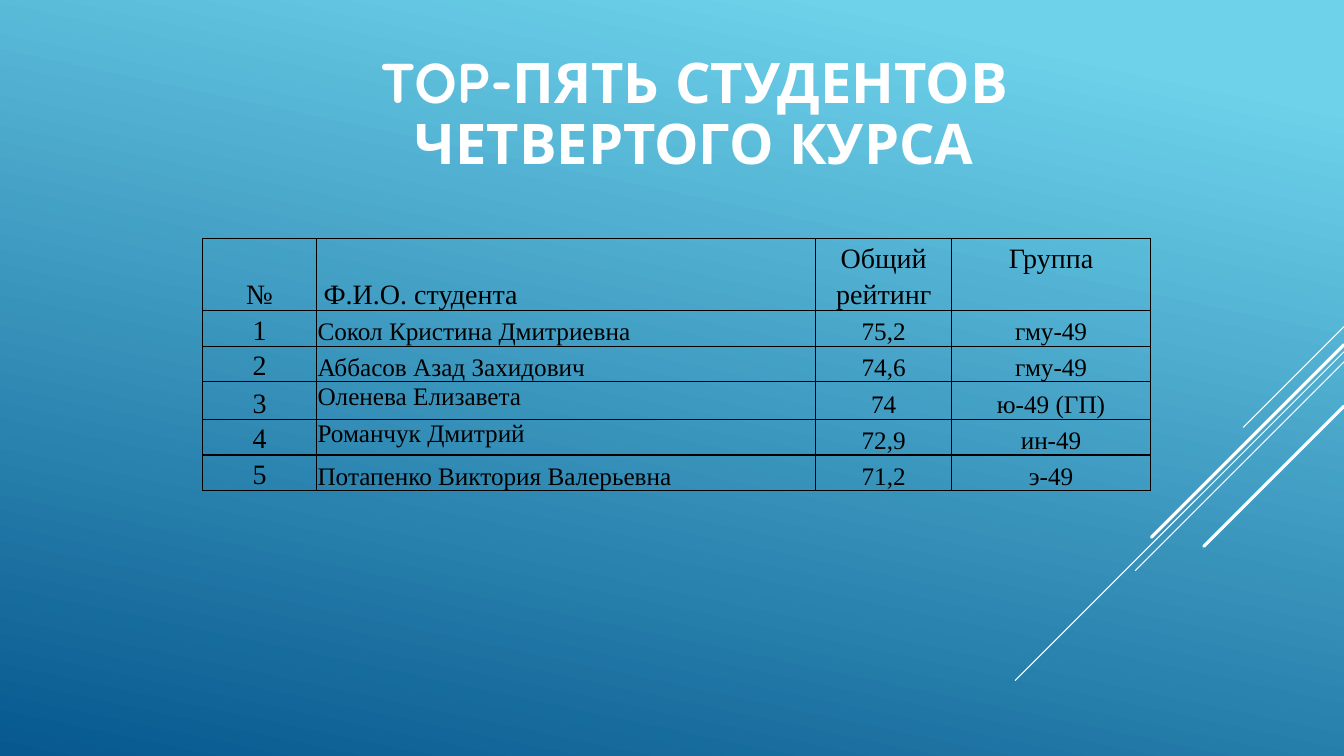
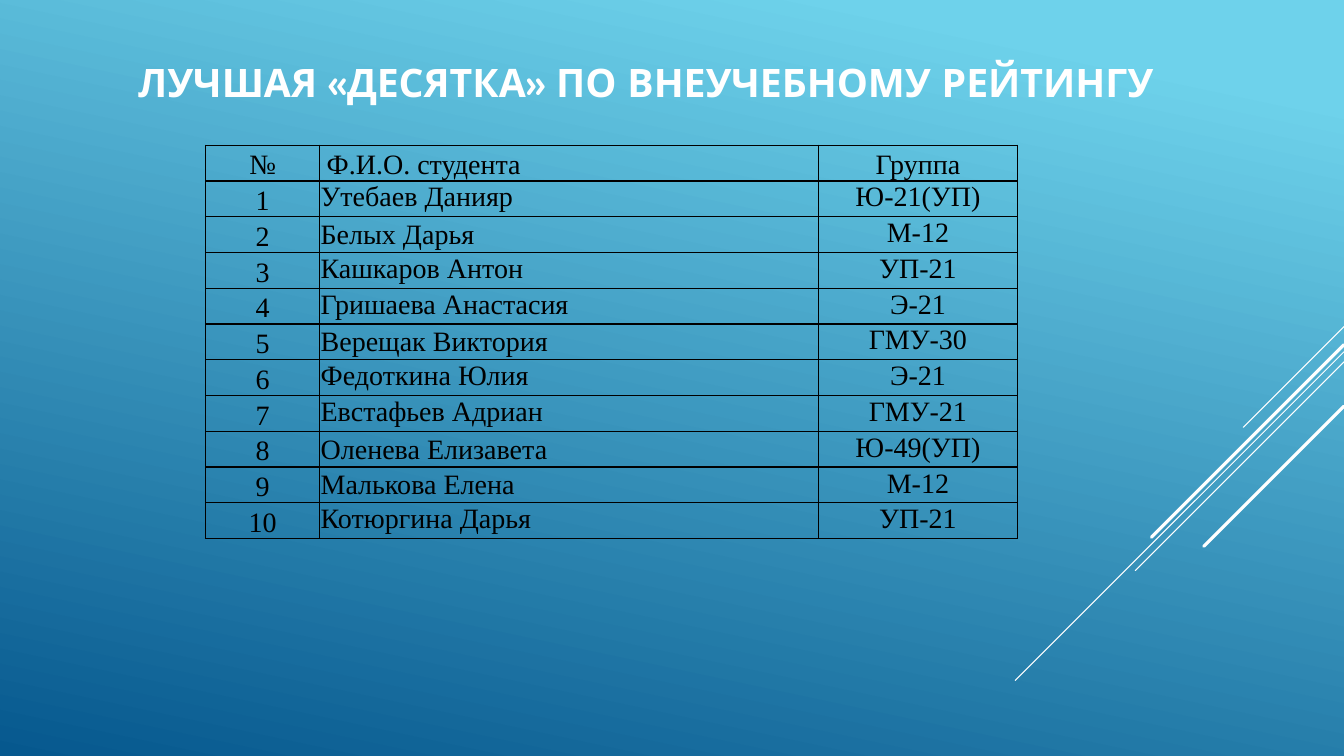
import lxml.etree
import pptx
import pptx.dml.color
import pptx.enum.shapes
import pptx.enum.text
import pptx.oxml.ns
import pptx.util

Inches = pptx.util.Inches
Pt = pptx.util.Pt
Align = pptx.enum.text.PP_ALIGN
Anchor = pptx.enum.text.MSO_ANCHOR
qn = pptx.oxml.ns.qn

WHITE, BLACK = "FFFFFF", "000000"
SKY, OCEAN = "6ED2EB", "06588E"
TITLE_FONT, TABLE_FONT = "Quicksand", "Times New Roman"
NUMBER_WIDTH, NAME_WIDTH, RATING_WIDTH, GROUP_WIDTH = 1.13, 4.95, 1.35, 1.97
ROW_HEIGHT = 0.21
RIGHT_EDGE = 13.33
RAYS = [
    (3.24, 1.00, 0.75),
    (3.49, 3.26, 0.75),
    (3.59, 2.07, 0.75),
    (3.42, 1.91, 2.25),
    (4.03, 1.39, 2.25),
]


def paint(color_format, value):
    color_format.rgb = pptx.dml.color.RGBColor.from_string(value)


def set_background(master):
    fill = master.background.fill
    fill.gradient()
    fill.gradient_angle = 258
    for stop, value, position in zip(fill.gradient_stops, (SKY, OCEAN), (0.1, 1)):
        paint(stop.color, value)
        stop.position = position


def add_rays(slide, right):
    for top, run, weight in RAYS:
        ray = slide.shapes.add_connector(
            pptx.enum.shapes.MSO_CONNECTOR.STRAIGHT,
            Inches(right), Inches(top), Inches(right - run), Inches(top + run))
        paint(ray.line.color, WHITE)
        ray.line.width = Pt(weight)
        properties = ray._element.spPr
        properties.find(qn("a:ln")).set("cap", "rnd")
        lxml.etree.SubElement(properties, qn("a:effectLst"))


def add_run(paragraph, text, font_name, size, color, bold=False):
    run = paragraph.add_run()
    run.text = text
    run.font.name = font_name
    run.font.size = Pt(size)
    run.font.bold = bold
    paint(run.font.color, color)


def place_title(slide, text, box, size, align):
    title = slide.shapes.title
    title.left, title.top, title.width, title.height = map(Inches, box)
    frame = title.text_frame
    frame.word_wrap = True
    frame.auto_size = pptx.enum.text.MSO_AUTO_SIZE.NONE
    frame.vertical_anchor = Anchor.BOTTOM
    heading = frame.paragraphs[0]
    heading.alignment = align
    heading.line_spacing = 0.9
    add_run(heading, text, TITLE_FONT, size, WHITE, True)


def outline_cell(cell):
    properties = cell._tc.get_or_add_tcPr()
    for side in ("lnL", "lnR", "lnT", "lnB"):
        border = lxml.etree.SubElement(properties, qn(f"a:{side}"), w=str(Pt(1)))
        solid = lxml.etree.SubElement(border, qn("a:solidFill"))
        lxml.etree.SubElement(solid, qn("a:srgbClr"), val=BLACK)
    cell.fill.background()


def fill_cell(cell, text, size, align, anchor, roomy):
    outline_cell(cell)
    cell.margin_left = cell.margin_right = Inches(0.07 if roomy else 0.01)
    cell.margin_top = Inches(0 if roomy else 0.01)
    cell.margin_bottom = 0
    cell.vertical_anchor = anchor
    entry = cell.text_frame.paragraphs[0]
    entry.alignment = align
    if roomy:
        entry.line_spacing = 1.15
    add_run(entry, text, TABLE_FONT, size, BLACK)


def add_ranking(slide, left, top, widths, header, students, size,
                body_anchor, anchors, heights):
    rows = [header] + [(str(place), *student)
                       for place, student in enumerate(students, 1)]
    ranking = slide.shapes.add_table(
        len(rows), len(widths), Inches(left), Inches(top),
        Inches(sum(widths)), Inches(ROW_HEIGHT * len(rows))).table
    ranking.first_row = ranking.horz_banding = False
    for column, width in zip(ranking.columns, widths):
        column.width = Inches(width)
    for r, values in enumerate(rows):
        ranking.rows[r].height = Inches(heights.get(r, ROW_HEIGHT))
        for c, value in enumerate(values):
            roomy = r == 0 or c == 0
            if r == 0 and c == len(widths) - 1:
                anchor = Anchor.TOP
            elif roomy:
                anchor = Anchor.BOTTOM
            else:
                anchor = anchors.get((r, c), body_anchor)
            fill_cell(ranking.cell(r, c), value, 20 if roomy else size,
                      Align.LEFT if c == 1 else Align.CENTER, anchor, roomy)


def add_rating_slide(deck, title, title_box, title_size, title_align, **ranking):
    slide = deck.slides.add_slide(deck.slide_layouts[5])
    add_rays(slide, RIGHT_EDGE)
    place_title(slide, title, title_box, title_size, title_align)
    add_ranking(slide, **ranking)


def main():
    deck = pptx.Presentation()
    deck.slide_width, deck.slide_height = Inches(RIGHT_EDGE), Inches(7.5)
    set_background(deck.slide_master)
    add_rating_slide(
        deck, "TOP-ПЯТЬ СТУДЕНТОВ ЧЕТВЕРТОГО КУРСА",
        (2.91, 0.97, 7.95, 0.83), 40, Align.CENTER,
        left=2.01, top=2.37,
        widths=(NUMBER_WIDTH, NAME_WIDTH, RATING_WIDTH, GROUP_WIDTH),
        header=("№", "Ф.И.О. студента", "Общий рейтинг", "Группа"),
        students=[
            ("Сокол Кристина Дмитриевна", "75,2", "гму-49"),
            ("Аббасов Азад Захидович", "74,6", "гму-49"),
            ("Оленева Елизавета", "74", "ю-49 (ГП)"),
            ("Романчук Дмитрий", "72,9", "ин-49"),
            ("Потапенко Виктория Валерьевна", "71,2", "э-49"),
        ],
        size=18, body_anchor=Anchor.BOTTOM,
        anchors={(r, 1): Anchor.TOP for r in (3, 4)}, heights={3: 0.37})
    add_rating_slide(
        deck, "ЛУЧШАЯ «ДЕСЯТКА» ПО ВНЕУЧЕБНОМУ РЕЙТИНГУ",
        (1.27, 0.27, 10.37, 0.83), 28, Align.LEFT,
        left=2.04, top=1.44,
        widths=(NUMBER_WIDTH, NAME_WIDTH, GROUP_WIDTH),
        header=("№", "Ф.И.О. студента", "Группа"),
        students=[
            ("Утебаев Данияр", "Ю-21(УП)"),
            ("Белых Дарья", "М-12"),
            ("Кашкаров Антон", "УП-21"),
            ("Гришаева Анастасия", "Э-21"),
            ("Верещак Виктория", "ГМУ-30"),
            ("Федоткина Юлия", "Э-21"),
            ("Евстафьев Адриан", "ГМУ-21"),
            ("Оленева Елизавета", "Ю-49(УП)"),
            ("Малькова Елена", "М-12"),
            ("Котюргина Дарья", "УП-21"),
        ],
        size=20, body_anchor=Anchor.TOP,
        anchors={(r, 1): Anchor.MIDDLE for r in (2, 5, 8, 9)}, heights={})
    deck.save("out.pptx")


if __name__ == "__main__":
    main()
